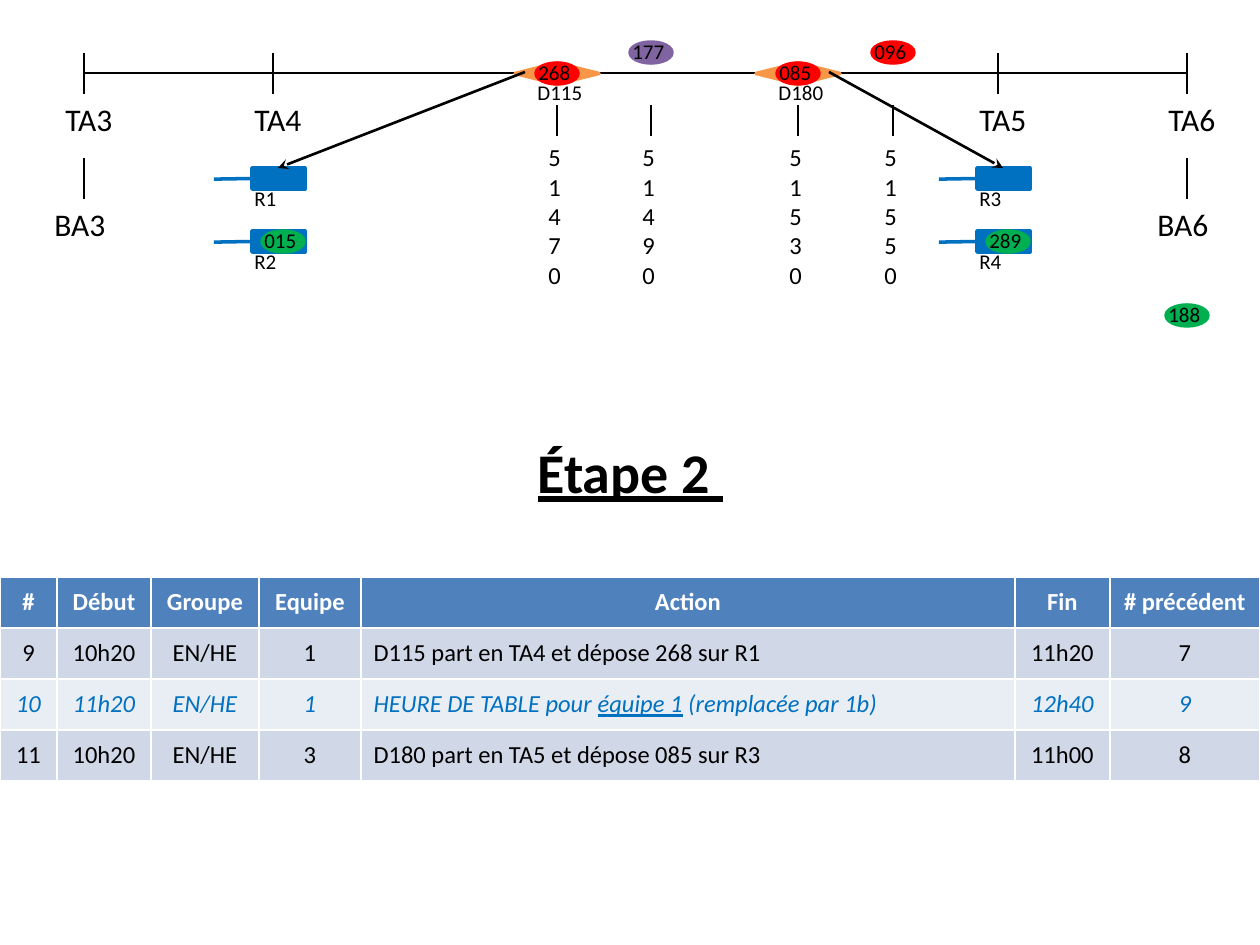
from dataclasses import dataclass
from typing import NamedTuple
from pptx import Presentation
from pptx.dml.color import RGBColor as RGB
from pptx.enum.shapes import MSO_CONNECTOR as Link, MSO_SHAPE as Kind
from pptx.enum.text import MSO_ANCHOR as Anchor, MSO_AUTO_SIZE as Fit, PP_ALIGN as Align
from pptx.oxml.ns import qn
from pptx.util import Pt
from lxml.etree import SubElement as sub

SCALE = 914400 / 126


@dataclass(frozen=True)
class Theme:
    font: str = "Calibri"
    ink: str = "000000"
    white: str = "FFFFFF"
    blue: str = "0070C0"
    orange: str = "F79646"
    red: str = "FF0000"
    green: str = "00B050"
    purple: str = "8064A2"
    head: str = "4F81BD"
    bands: tuple = ("D0D8E8", "E9EDF4")
    small: int = 12
    cell: int = 14
    label: int = 18
    title: int = 32


class Stop(NamedTuple):
    name: str
    x: int
    y: int


class Siding(NamedTuple):
    name: str
    x: int
    y: int


class Engine(NamedTuple):
    name: str
    x: int


class Train(NamedTuple):
    name: str
    x: int
    y: int
    color: str


class Point(NamedTuple):
    code: str
    x: int


class Step(NamedTuple):
    cells: tuple
    pause: bool = False


T = Theme()
TRACK = 73
STOPS = [Stop("TA3", 84, 53), Stop("TA4", 273, 53), Stop("TA5", 998, 53),
         Stop("TA6", 1187, 53)]
BASES = [Stop("BA3", 84, 158), Stop("BA6", 1187, 158)]
ENGINES = [Engine("D115", 557), Engine("D180", 798)]
POINTS = [Point("51470", 557), Point("51490", 651),
          Point("51530", 798), Point("51550", 893)]
SIDINGS = [Siding("R1", 252, 168), Siding("R2", 252, 231),
           Siding("R3", 977, 168), Siding("R4", 977, 231)]
TRAINS = [Train("268", 536, 63, T.red), Train("177", 630, 42, T.purple),
          Train("085", 777, 63, T.red), Train("096", 872, 42, T.red),
          Train("015", 262, 231, T.green), Train("289", 987, 231, T.green),
          Train("188", 1166, 305, T.green)]
COLS = [57, 94, 108, 102, 654, 95, 150]
ACTION = 4
HEAD = ("#", "Début", "Groupe", "Equipe", "Action", "Fin", "# précédent")
STEPS = [
    Step(("9", "10h20", "EN/HE", "1", "D115 part en TA4 et dépose 268 sur R1", "11h20", "7")),
    Step(("10", "11h20", "EN/HE", "1",
          "HEURE DE TABLE pour |équipe 1| (remplacée par 1b)", "12h40", "9"), True),
    Step(("11", "10h20", "EN/HE", "3", "D180 part en TA5 et dépose 085 sur R3", "11h00", "8")),
]


def px(n: int) -> int:
    return round(n * SCALE)


def style(para, size: int, color: str = T.ink, bold: bool = False,
          slant: bool = False) -> None:
    font = para.font
    font.name, font.size = T.font, Pt(size)
    font.bold, font.italic = bold, slant
    font.color.rgb = RGB.from_string(color)


def label(slide, text: str, x: int, y: int, w: int, h: int, size: int) -> None:
    frame = slide.shapes.add_textbox(px(x), px(y), px(w), px(h)).text_frame
    frame.word_wrap = True
    frame.auto_size = Fit.SHAPE_TO_FIT_TEXT
    frame.text = text
    style(frame.paragraphs[0], size)


def line(slide, x1: int, y1: int, x2: int, y2: int, arrow: bool = False) -> None:
    link = slide.shapes.add_connector(Link.STRAIGHT, px(x1), px(y1), px(x2), px(y2))
    link.line.color.rgb = RGB.from_string(T.ink)
    link.line.width = Pt(1.5)
    if arrow:
        sub(link.line._get_or_add_ln(), qn("a:tailEnd"), type="stealth")
    sub(link._element.spPr, qn("a:effectLst"))


def block(slide, kind: Kind, x: int, y: int, w: int, h: int, color: str):
    shape = slide.shapes.add_shape(kind, px(x), px(y), px(w), px(h))
    shape.shadow.inherit = False
    shape.fill.solid()
    shape.fill.fore_color.rgb = shape.line.color.rgb = RGB.from_string(color)
    shape.line.width = Pt(2)
    return shape


def draw_stop(slide, stop: Stop, shift: int, wide: int) -> None:
    line(slide, stop.x, stop.y, stop.x, stop.y + 41)
    label(slide, stop.name, stop.x - shift, stop.y + 41, wide, 50, T.label)


def draw_engine(slide, eng: Engine) -> None:
    block(slide, Kind.FLOWCHART_DECISION, eng.x - 42, TRACK - 10, 84, 21, T.orange)
    label(slide, eng.name, eng.x - 32, TRACK, 84, 38, T.small)


def draw_point(slide, point: Point) -> None:
    line(slide, point.x, 105, point.x, 136)
    label(slide, point.code, point.x - 21, 136, 32, 161, T.cell)


def draw_siding(slide, side: Siding) -> None:
    box = block(slide, Kind.LINE_CALLOUT_1, side.x, side.y, 53, 21, T.blue)
    for i, value in enumerate((0.5, -0.01, 0.53, -0.72)):
        box.adjustments[i] = value
    label(slide, side.name, side.x - 10, side.y + 11, 53, 38, T.small)


def draw_train(slide, train: Train) -> None:
    block(slide, Kind.OVAL, train.x, train.y, 42, 21, train.color)
    label(slide, train.name, train.x - 10, train.y - 10, 63, 38, T.small)


def draw_title(slide, text: str) -> None:
    title = slide.shapes.title
    title.left, title.top, title.width, title.height = map(px, (525, 431, 284, 80))
    frame = title.text_frame
    frame.text = text
    frame.vertical_anchor = Anchor.TOP
    frame.auto_size = Fit.SHAPE_TO_FIT_TEXT
    para = frame.paragraphs[0]
    para.alignment = Align.LEFT
    style(para, T.title, bold=True)
    para.font.underline = True


def fill_cell(cell, text: str, fill: str, mid: bool, **look) -> None:
    cell.fill.solid()
    cell.fill.fore_color.rgb = RGB.from_string(fill)
    cell.vertical_anchor = Anchor.MIDDLE
    para = cell.text_frame.paragraphs[0]
    for i, part in enumerate(text.split("|")):
        run = para.add_run()
        run.text = part
        if i % 2:
            run.font.underline = True
    para.alignment = Align.CENTER if mid else Align.LEFT
    style(para, T.cell, **look)


def draw_table(slide) -> None:
    table = slide.shapes.add_table(len(STEPS) + 1, len(COLS), 0, px(577),
                                   px(sum(COLS)), px(204)).table
    for col, wide in zip(table.columns, COLS):
        col.width = px(wide)
    for c, text in enumerate(HEAD):
        fill_cell(table.cell(0, c), text, T.head, True, color=T.white, bold=True)
    for r, step in enumerate(STEPS):
        for c, text in enumerate(step.cells):
            fill_cell(table.cell(r + 1, c), text, T.bands[r % 2], c != ACTION,
                      color=T.blue if step.pause else T.ink, slant=step.pause)


def main() -> None:
    deck = Presentation()
    deck.slide_width, deck.slide_height = px(1260), px(945)
    slide = deck.slides.add_slide(deck.slide_layouts[5])
    draw_title(slide, "Étape 2 ")
    line(slide, STOPS[0].x, TRACK, STOPS[-1].x, TRACK)
    for stop in STOPS:
        draw_stop(slide, stop, 31, 73)
    for base in BASES:
        draw_stop(slide, base, 42, 84)
    for draw, items in ((draw_engine, ENGINES), (draw_point, POINTS),
                        (draw_siding, SIDINGS), (draw_train, TRAINS)):
        for item in items:
            draw(slide, item)
    line(slide, 525, 72, 278, 168, arrow=True)
    line(slide, 829, 72, 1003, 168, arrow=True)
    draw_table(slide)
    deck.save("out.pptx")


if __name__ == "__main__":
    main()
